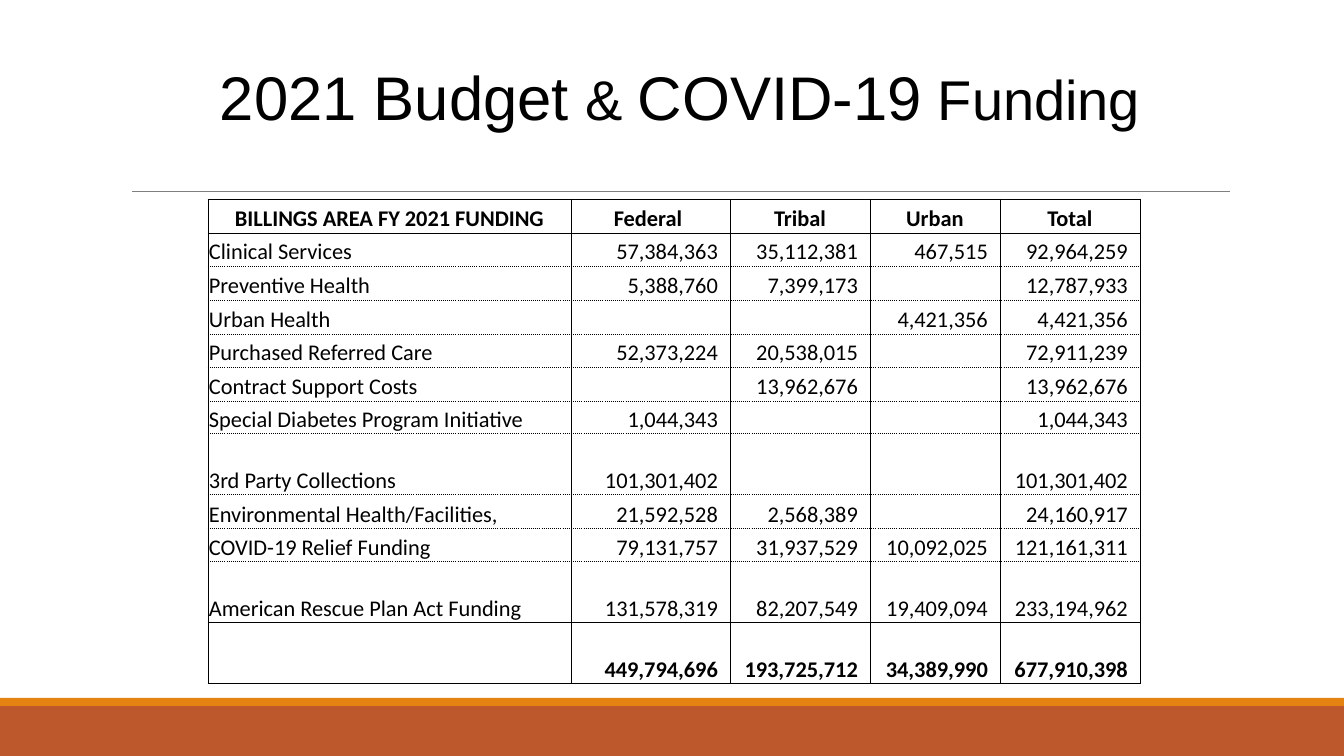
from lxml.etree import SubElement as Sub
from pptx import Presentation
from pptx.dml.color import RGBColor
from pptx.enum.shapes import MSO_CONNECTOR as Conn, MSO_SHAPE as Shape
from pptx.enum.text import MSO_ANCHOR as Anchor, PP_ALIGN as Align
from pptx.oxml.ns import qn
from pptx.util import Emu, Pt

BLACK = RGBColor(0, 0, 0)
GRAY = RGBColor(0x80, 0x80, 0x80)
RUST = RGBColor(0xBD, 0x58, 0x2C)
AMBER = RGBColor(0xE4, 0x83, 0x12)


def px(n):
    return Emu(round(n * 914400 / 100.8))


def add_run(par, text, size, face, bold=False):
    run = par.add_run()
    run.text = text
    font = run.font
    font.size, font.name, font.bold = Pt(size), face, bold
    font.color.rgb = BLACK


deck = Presentation()
deck.slide_width, deck.slide_height = px(1344), px(756)
slide = deck.slides.add_slide(deck.slide_layouts[6])
shapes = slide.shapes

for top, high, color in [(706, 50, RUST), (698, 8, AMBER)]:
    band = shapes.add_shape(Shape.RECTANGLE, 0, px(top), px(1344), px(high))
    band.shadow.inherit = False
    band.fill.solid()
    band.fill.fore_color.rgb = color
    band.line.fill.background()

rule = shapes.add_connector(Conn.STRAIGHT, px(132), px(191), px(1230), px(191))
rule.line.color.rgb = GRAY
rule.line.width = Pt(0.5)
Sub(rule._element.spPr, qn("a:effectLst"))

title = shapes.add_textbox(px(130), px(31), px(1100), px(141)).text_frame
title.word_wrap = True
title.vertical_anchor = Anchor.MIDDLE
par = title.paragraphs[0]
par.alignment = Align.CENTER
par.line_spacing = 0.85
for text, size in [("2021 Budget", 44), (" & ", 40), ("COVID-19", 44), (" Funding", 40)]:
    add_run(par, text, size, "Arial")

rows = [
    ("BILLINGS AREA FY 2021 FUNDING", "Federal ", "Tribal", "Urban", "Total"),
    ("Clinical Services", "57,384,363", "35,112,381", "467,515", "92,964,259"),
    ("Preventive Health", "5,388,760", "7,399,173", "", "12,787,933"),
    ("Urban Health", "", "", "4,421,356", "4,421,356"),
    ("Purchased Referred Care", "52,373,224", "20,538,015", "", "72,911,239"),
    ("Contract Support Costs", "", "13,962,676", "", "13,962,676"),
    ("Special Diabetes Program Initiative", "1,044,343", "", "", "1,044,343"),
    ("3rd Party Collections", "101,301,402", "", "", "101,301,402"),
    ("Environmental Health/Facilities,", "21,592,528", "2,568,389", "", "24,160,917"),
    ("COVID-19 Relief Funding", "79,131,757", "31,937,529", "10,092,025", "121,161,311"),
    ("American Rescue Plan Act Funding", "131,578,319", "82,207,549", "19,409,094", "233,194,962"),
    ("", "449,794,696", "193,725,712", "34,389,990", "677,910,398"),
]
widths = [363, 159, 140, 130, 140]
heights = [34, 33, 34, 34, 33, 34, 33, 61, 34, 33, 61, 61]
last = len(rows) - 1

frame = shapes.add_table(len(rows), len(widths), px(208), px(199), px(sum(widths)), px(sum(heights)))
table = frame.table
table.first_row = table.horz_banding = False
for col, wide in zip(table.columns, widths):
    col.width = px(wide)
for row, high in zip(table.rows, heights):
    row.height = px(high)

for r, row in enumerate(rows):
    for c, text in enumerate(row):
        cell = table.cell(r, c)
        cell.vertical_anchor = Anchor.BOTTOM
        cell.margin_left = cell.margin_top = px(1)
        cell.margin_right = px(12 if r and c else 1)
        cell.margin_bottom = 0
        par = cell.text_frame.paragraphs[0]
        if r == 0:
            par.alignment = Align.CENTER
        else:
            par.alignment = Align.RIGHT if c else Align.LEFT
        if text:
            add_run(par, text, 16, "Calibri", r in (0, last))
        props = cell._tc.get_or_add_tcPr()
        dots = {"T": 1 < r < last, "B": 0 < r < last - 1}
        for side in "LRTB":
            edge = Sub(props, qn("a:ln" + side), w=str(Pt(0.5)))
            fill = Sub(edge, qn("a:solidFill"))
            Sub(fill, qn("a:srgbClr"), val=str(BLACK))
            Sub(edge, qn("a:prstDash"), val="dot" if dots.get(side) else "solid")
        cell.fill.background()

deck.save("out.pptx")
